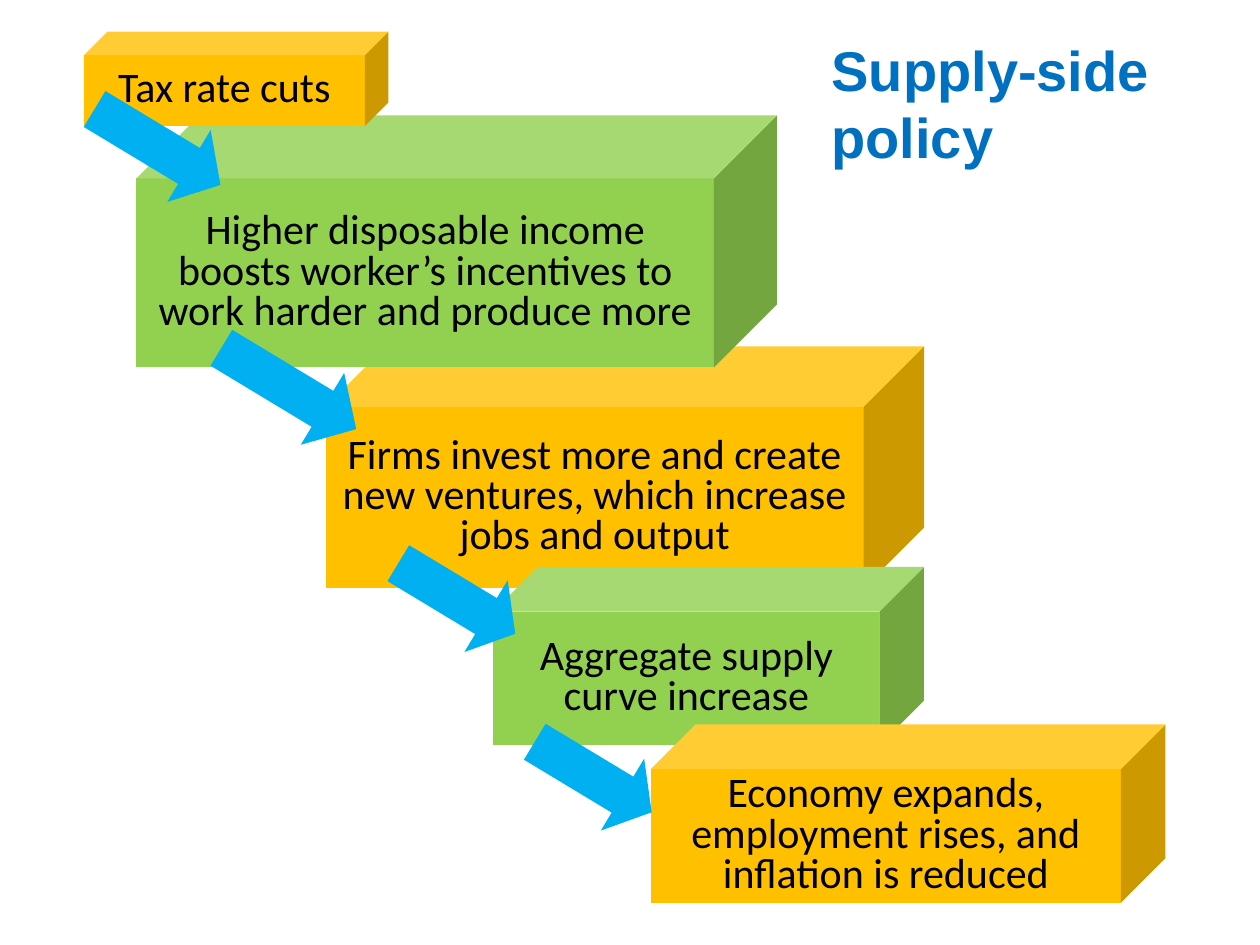
from pptx import Presentation
from pptx.dml.color import RGBColor
from pptx.enum.shapes import MSO_SHAPE
from pptx.enum.text import MSO_ANCHOR, MSO_AUTO_SIZE, PP_ALIGN
from pptx.util import Emu, Pt

CUBE = MSO_SHAPE.CUBE
ARROW = MSO_SHAPE.RIGHT_ARROW
MIDDLE = MSO_ANCHOR.MIDDLE
TOP = MSO_ANCHOR.TOP
CENTER = PP_ALIGN.CENTER
LEFT = PP_ALIGN.LEFT
NO_AUTOFIT = MSO_AUTO_SIZE.NONE

EMU_PER_PX = 9525  # 96 px to the inch
SLIDE_SIZE = (960, 720)
TITLE_ONLY = 5

ORANGE = "FFC000"
GREEN = "92D050"
ARROW_BLUE = "00B0F0"
TITLE_BLUE = "0070C0"
BLACK = "000000"

ARROW_HEIGHT = 64
ARROW_ANGLE = 31.1
NORMAL_INSET = 5
DEEP_INSET = 53

# Back to front: box, fill, vertical inset, wording
STEPS = [
    ((248, 264, 456, 184), ORANGE, NORMAL_INSET,
     "Firms invest more and create new ventures, which increase jobs and output"),
    ((104, 88, 488, 192), GREEN, DEEP_INSET,
     "Higher disposable income boosts worker’s incentives to work harder and produce more"),
    ((64, 24, 232, 72), ORANGE, DEEP_INSET, "Tax rate cuts"),
    ((376, 432, 328, 136), GREEN, NORMAL_INSET, "Aggregate supply curve increase"),
    ((496, 552, 392, 136), ORANGE, NORMAL_INSET,
     "Economy expands, employment rises, and inflation is reduced"),
]
# Left, top, width
ARROWS = [(64, 80, 112), (160, 264, 120), (296, 424, 104), (400, 560, 104)]


def px(length):
    return Emu(length * EMU_PER_PX)


def color(hex_string):
    return RGBColor.from_string(hex_string)


def add_run(paragraph, text, font_name, size, hex_string, bold=False):
    run = paragraph.add_run()
    run.text = text
    run.font.name = font_name
    run.font.size = Pt(size)
    run.font.bold = bold
    run.font.color.rgb = color(hex_string)


def add_filled_shape(slide, kind, box, fill):
    shape = slide.shapes.add_shape(kind, *map(px, box))
    shape.shadow.inherit = False
    shape.fill.solid()
    shape.fill.fore_color.rgb = color(fill)
    shape.line.fill.background()
    return shape


def place_title(slide, box, text):
    title = slide.shapes.title
    title.left, title.top, title.width, title.height = map(px, box)
    frame = title.text_frame
    frame.word_wrap = True
    frame.auto_size = NO_AUTOFIT
    frame.vertical_anchor = TOP
    paragraph = frame.paragraphs[0]
    paragraph.alignment = LEFT
    paragraph.line_spacing = 1.0
    paragraph.space_before = Pt(4)
    add_run(paragraph, text, "Arial", 32, TITLE_BLUE, bold=True)


def add_step(slide, box, fill, inset, text):
    cube = add_filled_shape(slide, CUBE, box, fill)
    cube.adjustments[0] = 0.25
    frame = cube.text_frame
    frame.word_wrap = True
    frame.vertical_anchor = MIDDLE
    frame.margin_top = frame.margin_bottom = px(inset)
    paragraph = frame.paragraphs[0]
    paragraph.alignment = CENTER
    paragraph.line_spacing = 0.8
    add_run(paragraph, text, "Calibri", 24, BLACK)


def add_step_arrow(slide, left, top, width):
    """Add a slanted arrow whose head takes a quarter of its length."""
    arrow = add_filled_shape(slide, ARROW, (left, top, width, ARROW_HEIGHT), ARROW_BLUE)
    arrow.adjustments[0] = 0.5
    arrow.adjustments[1] = width / (4 * ARROW_HEIGHT)
    arrow.rotation = ARROW_ANGLE


def main():
    presentation = Presentation()
    presentation.slide_width, presentation.slide_height = map(px, SLIDE_SIZE)
    slide = presentation.slides.add_slide(presentation.slide_layouts[TITLE_ONLY])
    place_title(slide, (624, 22, 296, 103), "Supply-side policy")
    for step in STEPS:
        add_step(slide, *step)
    for arrow in ARROWS:
        add_step_arrow(slide, *arrow)
    presentation.save("out.pptx")


if __name__ == "__main__":
    main()
